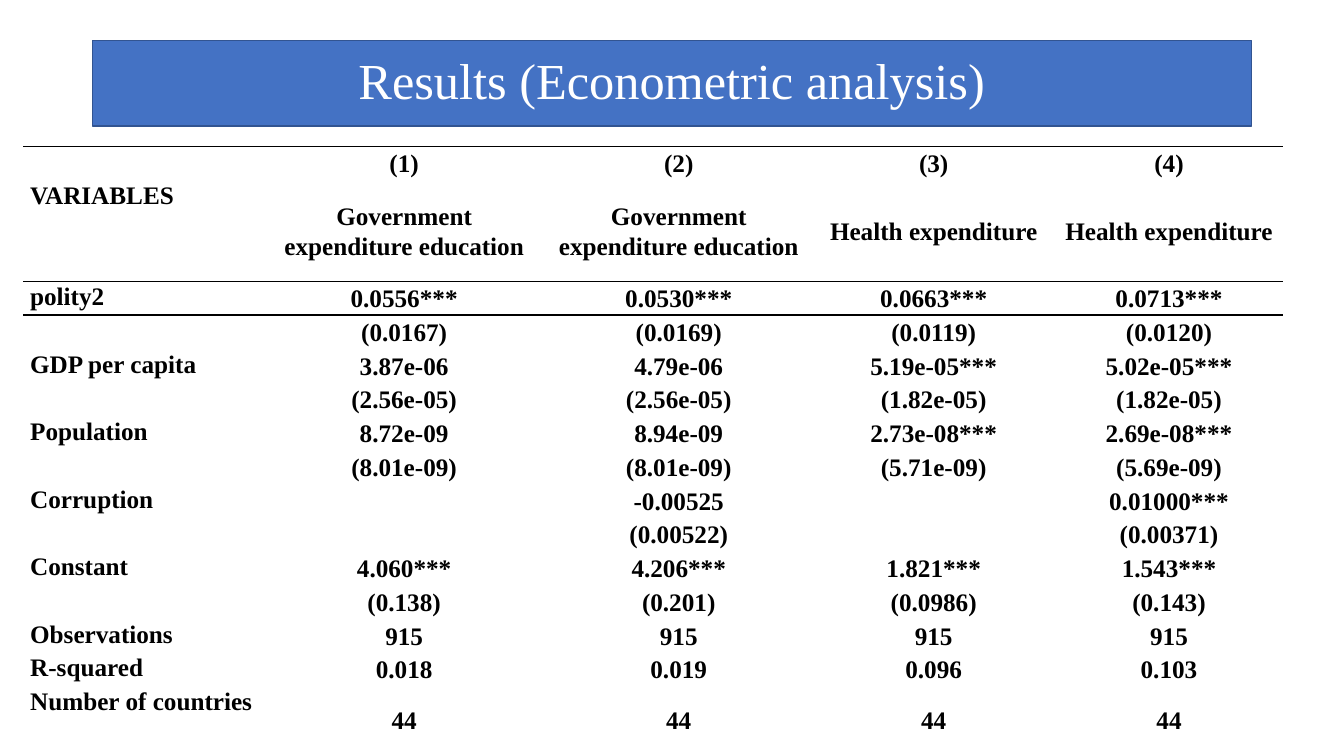
"""Builds a slide with a table of regression results."""
from dataclasses import dataclass

from lxml import etree
from pptx import Presentation
from pptx import util as u
from pptx.dml import color
from pptx.enum import text
from pptx.oxml import ns


@dataclass(frozen=True)
class Theme:
    """Colours, font and type sizes of the slide."""
    font: str = "Times New Roman"
    banner: str = "4472C4"
    banner_line: str = "325491"
    light: str = "FFFFFF"
    ink: str = "000000"
    title_size: int = 36
    cell_size: int = 18


THEME = Theme()
NO_STYLE = "{2D5ABB26-0587-4C30-8999-92F81FD0307C}"
ROW_UNIT = 0.85
COLUMN_WIDTHS = (6.05, 7.11, 6.73, 6.12, 5.74)
EDUCATION, HEALTH = "Government expenditure education", "Health expenditure"
RESULTS = (
    ("", "(1)", "(2)", "(3)", "(4)"),
    ("VARIABLES", EDUCATION, EDUCATION, HEALTH, HEALTH),
    ("polity2", "0.0556***", "0.0530***", "0.0663***", "0.0713***"),
    ("", "(0.0167)", "(0.0169)", "(0.0119)", "(0.0120)"),
    ("GDP per capita", "3.87e-06", "4.79e-06", "5.19e-05***", "5.02e-05***"),
    ("", "(2.56e-05)", "(2.56e-05)", "(1.82e-05)", "(1.82e-05)"),
    ("Population", "8.72e-09", "8.94e-09", "2.73e-08***", "2.69e-08***"),
    ("", "(8.01e-09)", "(8.01e-09)", "(5.71e-09)", "(5.69e-09)"),
    ("Corruption", "", "-0.00525", "", "0.01000***"),
    ("", "", "(0.00522)", "", "(0.00371)"),
    ("Constant", "4.060***", "4.206***", "1.821***", "1.543***"),
    ("", "(0.138)", "(0.201)", "(0.0986)", "(0.143)"),
    ("Observations", "915", "915", "915", "915"),
    ("R-squared", "0.018", "0.019", "0.096", "0.103"),
    ("Number of countries", "44", "44", "44", "44"),
)
HEADER, CORRUPTION, COUNTRIES = 1, 8, len(RESULTS) - 1
ROW_SPANS = {HEADER: 3, COUNTRIES: 2}
RULES = {0: "lnT", HEADER: "lnB", HEADER + 1: "lnT"}


def format_text(tf, size, hue, align, spacing, bold=False):
    """Format every paragraph and run of a text frame."""
    for p in tf.paragraphs:
        p.alignment, p.line_spacing = align, spacing
        for font in [p.font] + [r.font for r in p.runs]:
            font.name, font.size, font.bold = THEME.font, u.Pt(size), bold
            font.color.rgb = color.RGBColor.from_string(hue)


def add_title(s, words):
    """Turn the title placeholder into a filled banner."""
    sp = s.shapes.title
    sp.left, sp.top, sp.width, sp.height = u.Cm(2.33), u.Cm(1.02), u.Cm(29.21), u.Cm(2.16)
    geometry = etree.Element(ns.qn("a:prstGeom"), prst="horizontalScroll")
    etree.SubElement(geometry, ns.qn("a:avLst"))
    sp.element.spPr.insert(1, geometry)
    sp.fill.solid()
    sp.fill.fore_color.rgb = color.RGBColor.from_string(THEME.banner)
    sp.line.color.rgb = color.RGBColor.from_string(THEME.banner_line)
    sp.line.width = u.Pt(1)
    tf = sp.text_frame
    tf.text = words
    tf.auto_size = text.MSO_AUTO_SIZE.NONE
    tf.vertical_anchor = text.MSO_ANCHOR.MIDDLE
    format_text(tf, THEME.title_size, THEME.light, text.PP_ALIGN.CENTER, 0.9)


def add_rule(cell, side):
    """Draw a thin border on one side of a cell."""
    line = etree.Element(ns.qn(f"a:{side}"), w=str(u.Pt(1)))
    fill = etree.SubElement(line, ns.qn("a:solidFill"))
    etree.SubElement(fill, ns.qn("a:srgbClr"), val=THEME.ink)
    cell._tc.get_or_add_tcPr().insert(0, line)


def fill_cell(cell, words, is_label):
    """Write one cell, with labels at top left and values centred."""
    cell.margin_left = cell.margin_right = u.Cm(0.18)
    cell.margin_top = cell.margin_bottom = 0
    cell.vertical_anchor = text.MSO_ANCHOR.TOP if is_label else text.MSO_ANCHOR.MIDDLE
    cell.fill.background()
    cell.text_frame.text = words
    align = text.PP_ALIGN.LEFT if is_label else text.PP_ALIGN.CENTER
    format_text(cell.text_frame, THEME.cell_size, THEME.ink, align, 1.07, True)


def add_results(s):
    """Add the regression table with its horizontal rules."""
    units = [ROW_SPANS.get(i, 1) for i in range(len(RESULTS))]
    frame = s.shapes.add_table(
        len(RESULTS), len(COLUMN_WIDTHS), u.Cm(0.58), u.Cm(3.69),
        u.Cm(sum(COLUMN_WIDTHS)), u.Cm(ROW_UNIT * sum(units)))
    table = frame.table
    table.first_row = table.horz_banding = False
    table._tbl.tblPr[0].text = NO_STYLE
    for column, width in zip(table.columns, COLUMN_WIDTHS):
        column.width = u.Cm(width)
    for i, values in enumerate(RESULTS):
        table.rows[i].height = u.Cm(ROW_UNIT * units[i])
        for j, words in enumerate(values):
            cell = table.cell(i, j)
            fill_cell(cell, words, j == 0)
            if i in RULES:
                add_rule(cell, RULES[i])
    table.cell(CORRUPTION, 0).merge(table.cell(CORRUPTION, 1))


def main():
    """Build and save the slide."""
    prs = Presentation()
    prs.slide_width, prs.slide_height = u.Cm(33.87), u.Cm(19.05)
    s = prs.slides.add_slide(prs.slide_layouts[5])
    add_results(s)
    add_title(s, "Results (Econometric analysis)")
    prs.save("out.pptx")


if __name__ == "__main__":
    main()
